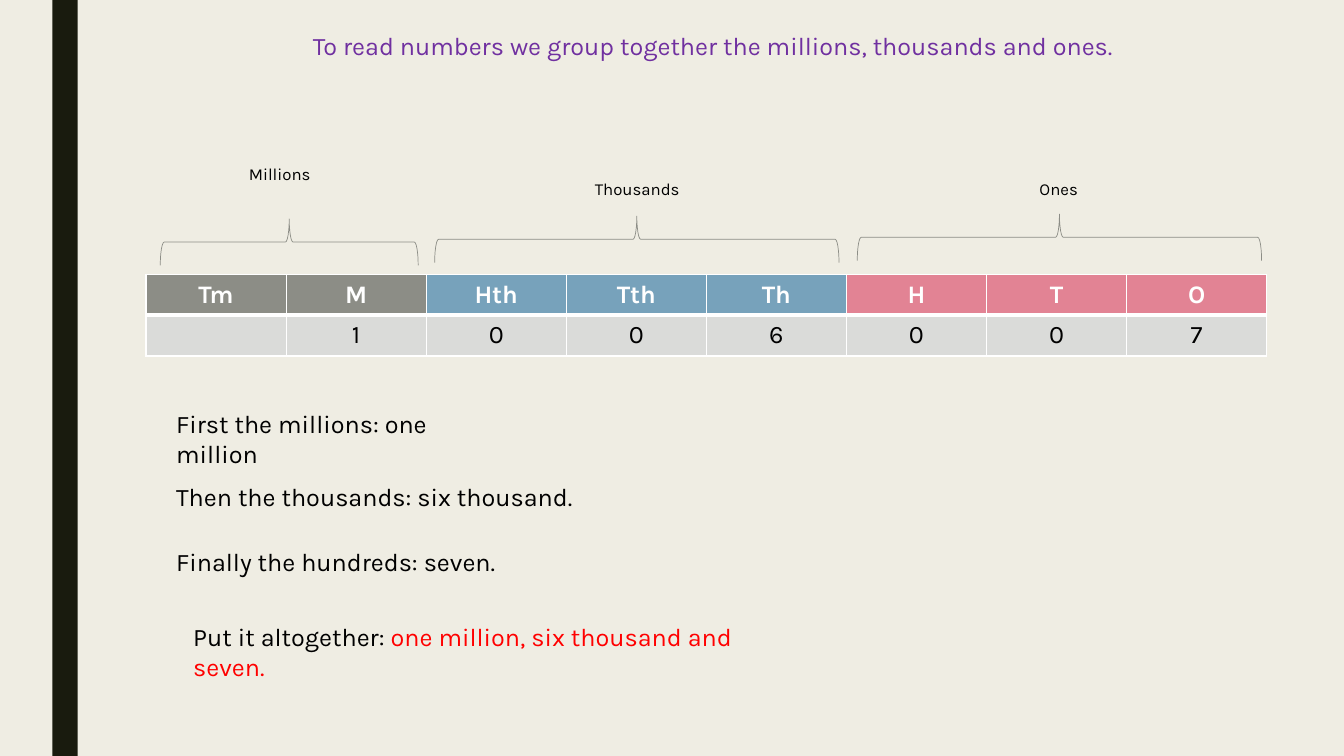
"""Builds a slide on reading seven-digit numbers with a place value table."""
import dataclasses
import typing

import lxml.etree
import pptx
import pptx.dml.color
import pptx.enum.shapes
import pptx.enum.text
import pptx.oxml.ns
import pptx.util

Cm = pptx.util.Cm
Pt = pptx.util.Pt
Align = pptx.enum.text.PP_ALIGN
Preset = pptx.enum.shapes.MSO_SHAPE


@dataclasses.dataclass(frozen=True)
class Theme:
    font: str = "Karla"
    body_size: float = 18
    label_size: float = 12
    background: str = "EFEDE3"
    sidebar: str = "191B0E"
    text: str = "000000"
    title: str = "7030A0"
    answer: str = "FF0000"
    light: str = "FFFFFF"
    digit_fill: str = "DADBD9"
    millions: str = "8C8D86"
    thousands: str = "77A2BB"
    ones: str = "E28394"
    brace: str = "8C8D86"


class Phrase(typing.NamedTuple):
    text: str
    color: str


@dataclasses.dataclass(frozen=True)
class TextBlock:
    left: float
    top: float
    width: float
    phrases: tuple[Phrase, ...]
    size: float
    align: Align = Align.LEFT
    height: float = 1.02


@dataclasses.dataclass(frozen=True)
class PlaceGroup:
    name: str
    columns: tuple[tuple[str, str], ...]
    fill: str
    label_center: float
    label_top: float
    brace_center: float
    brace_middle: float
    brace_span: float


THEME = Theme()
TABLE_LEFT, TABLE_TOP = 3.68, 6.91
COLUMN_WIDTH, ROW_HEIGHT = 3.53, 1.03
LABEL_WIDTH, LABEL_HEIGHT = 5.72, 0.77
BRACE_DEPTH = 1.17

GROUPS = (
    PlaceGroup("Millions", (("Tm", ""), ("M", "1")), THEME.millions,
               7.05, 4.01, 7.29, 6.1, 6.5),
    PlaceGroup("Thousands", (("Hth", "0"), ("Tth", "0"), ("Th", "6")), THEME.thousands,
               16.06, 4.39, 16.05, 6.03, 10.19),
    PlaceGroup("Ones", (("H", "0"), ("T", "0"), ("O", "7")), THEME.ones,
               26.68, 4.39, 26.7, 5.98, 10.19),
)

SENTENCES = (
    TextBlock(5.28, 0.64, 25.53, (Phrase(
        "To read numbers we group together the millions, thousands and ones. ",
        THEME.title),), THEME.body_size, Align.CENTER),
    TextBlock(4.19, 10.16, 8.56,
              (Phrase("First the millions: one million", THEME.text),), THEME.body_size),
    TextBlock(4.19, 12.01, 10.67,
              (Phrase("Then the thousands: six thousand.", THEME.text),), THEME.body_size),
    TextBlock(4.19, 13.64, 8.71,
              (Phrase("Finally the hundreds: seven.", THEME.text),), THEME.body_size),
    TextBlock(4.62, 15.52, 15.88,
              (Phrase("Put it altogether: ", THEME.text),
               Phrase("one million, six thousand and seven.", THEME.answer)),
              THEME.body_size),
)


def rgb(color: str) -> pptx.dml.color.RGBColor:
    """Turn a hex string into a colour."""
    return pptx.dml.color.RGBColor.from_string(color)


def add_run(paragraph, phrase: Phrase, size: float, bold: bool = False) -> None:
    """Append one styled run to a paragraph."""
    run = paragraph.add_run()
    run.text = phrase.text
    run.font.name = THEME.font
    run.font.size = Pt(size)
    run.font.bold = bold
    run.font.color.rgb = rgb(phrase.color)


def add_text(slide, block: TextBlock) -> None:
    """Draw a text block."""
    shape = slide.shapes.add_textbox(
        Cm(block.left), Cm(block.top), Cm(block.width), Cm(block.height))
    shape.text_frame.word_wrap = True
    paragraph = shape.text_frame.paragraphs[0]
    paragraph.alignment = block.align
    for phrase in block.phrases:
        add_run(paragraph, phrase, block.size)


def add_sidebar(slide, height: int) -> None:
    """Draw the dark vertical band."""
    shape = slide.shapes.add_shape(Preset.RECTANGLE, Cm(1.32), 0, Cm(0.64), height)
    shape.shadow.inherit = False
    shape.fill.solid()
    shape.fill.fore_color.rgb = rgb(THEME.sidebar)
    shape.line.fill.background()


def add_group_marker(slide, group: PlaceGroup) -> None:
    """Draw the brace of a group and its label."""
    brace = slide.shapes.add_shape(
        Preset.RIGHT_BRACE,
        Cm(group.brace_center - BRACE_DEPTH / 2),
        Cm(group.brace_middle - group.brace_span / 2),
        Cm(BRACE_DEPTH), Cm(group.brace_span))
    brace.rotation = 270
    brace.shadow.inherit = False
    brace.fill.background()
    brace.line.color.rgb = rgb(THEME.brace)
    brace.line.width = Pt(0.5)
    add_text(slide, TextBlock(
        group.label_center - LABEL_WIDTH / 2, group.label_top, LABEL_WIDTH,
        (Phrase(group.name, THEME.text),), THEME.label_size, Align.CENTER, LABEL_HEIGHT))


def set_borders(cell, widths: dict[str, float]) -> None:
    """Give a cell white borders of the given widths."""
    qn = pptx.oxml.ns.qn
    properties = cell._tc.get_or_add_tcPr()
    for side, width in widths.items():
        line = lxml.etree.SubElement(properties, qn(f"a:ln{side}"), w=str(Pt(width)))
        fill = lxml.etree.SubElement(line, qn("a:solidFill"))
        lxml.etree.SubElement(fill, qn("a:srgbClr"), val=THEME.light)


def fill_cell(cell, phrase: Phrase, fill: str, header: bool) -> None:
    """Style one table cell and write its text."""
    set_borders(cell, {"L": 1, "R": 1, "T": 1 if header else 3, "B": 3 if header else 1})
    cell.fill.solid()
    cell.fill.fore_color.rgb = rgb(fill)
    cell.vertical_anchor = pptx.enum.text.MSO_ANCHOR.MIDDLE
    paragraph = cell.text_frame.paragraphs[0]
    paragraph.alignment = Align.CENTER
    if phrase.text:
        add_run(paragraph, phrase, THEME.body_size, header)


def add_place_table(slide) -> None:
    """Draw the place value table."""
    columns = [(group.fill, *column) for group in GROUPS for column in group.columns]
    table = slide.shapes.add_table(
        2, len(columns), Cm(TABLE_LEFT), Cm(TABLE_TOP),
        Cm(COLUMN_WIDTH * len(columns)), Cm(ROW_HEIGHT * 2)).table
    table.horz_banding = False
    for row in table.rows:
        row.height = Cm(ROW_HEIGHT)
    for index, (fill, place, digit) in enumerate(columns):
        table.columns[index].width = Cm(COLUMN_WIDTH)
        fill_cell(table.cell(0, index), Phrase(place, THEME.light), fill, True)
        fill_cell(table.cell(1, index), Phrase(digit, THEME.text), THEME.digit_fill, False)


def main() -> None:
    """Build and save the presentation."""
    presentation = pptx.Presentation()
    presentation.slide_width = Cm(33.87)
    presentation.slide_height = Cm(19.05)
    slide = presentation.slides.add_slide(presentation.slide_layouts[6])
    slide.background.fill.solid()
    slide.background.fill.fore_color.rgb = rgb(THEME.background)
    add_sidebar(slide, presentation.slide_height)
    add_place_table(slide)
    for group in GROUPS:
        add_group_marker(slide, group)
    for sentence in SENTENCES:
        add_text(slide, sentence)
    presentation.save("out.pptx")


if __name__ == "__main__":
    main()
